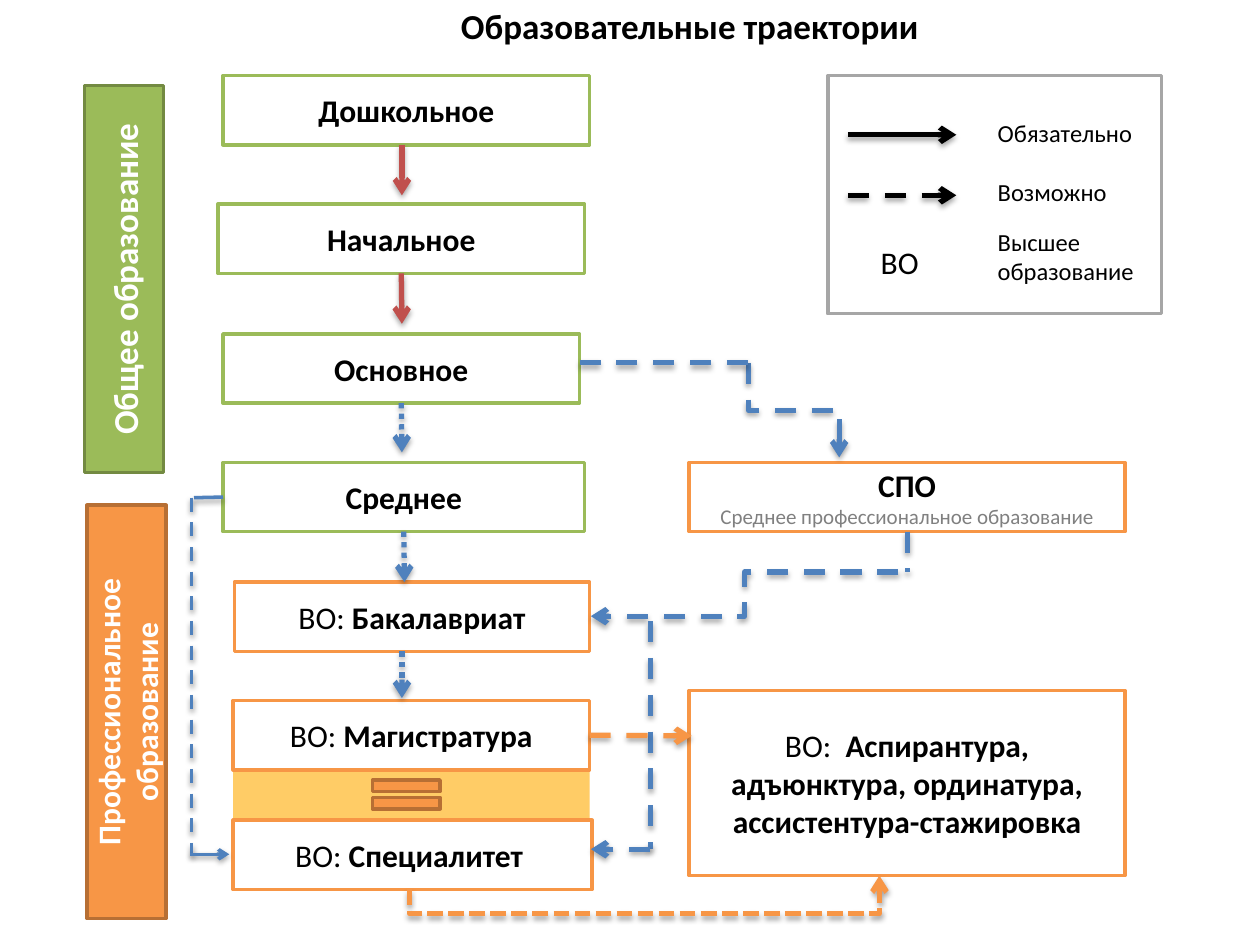
"""Builds the slide with the education pathways flowchart."""
from lxml.etree import SubElement
from pptx import Presentation
from pptx.dml.color import RGBColor
from pptx.enum.dml import MSO_LINE
from pptx.enum.shapes import MSO_CONNECTOR, MSO_SHAPE
from pptx.enum.text import MSO_ANCHOR, PP_ALIGN
from pptx.oxml.ns import qn
from pptx.util import Inches, Pt

BLACK = RGBColor(0x00, 0x00, 0x00)
WHITE = RGBColor(0xFF, 0xFF, 0xFF)
GREEN = RGBColor(0x9B, 0xBB, 0x59)
DARK_GREEN = RGBColor(0x73, 0x8A, 0x42)
ORANGE = RGBColor(0xF7, 0x96, 0x46)
DARK_ORANGE = RGBColor(0xB7, 0x6F, 0x34)
YELLOW = RGBColor(0xFF, 0xCC, 0x66)
BLUE = RGBColor(0x4F, 0x81, 0xBD)
RED = RGBColor(0xC0, 0x50, 0x4D)
GRAY = RGBColor(0x80, 0x80, 0x80)
LIGHT_GRAY = RGBColor(0xA6, 0xA6, 0xA6)
STEP_HEIGHT = 0.55


class Flowchart:
    def __init__(self, slide, font="Calibri"):
        self.shapes = slide.shapes
        self.font = font

    def box(self, left, top, width, height, fill=WHITE, line=None, kind=MSO_SHAPE.RECTANGLE):
        shape = self.shapes.add_shape(
            kind, Inches(left), Inches(top), Inches(width), Inches(height))
        shape.shadow.inherit = False
        shape.fill.solid()
        shape.fill.fore_color.rgb = fill
        if line is None:
            shape.line.fill.background()
        else:
            shape.line.color.rgb = line
            shape.line.width = Pt(2)
        return shape

    def style_runs(self, paragraph, size, color, bold, align):
        paragraph.alignment = align
        for run in paragraph.runs:
            run.font.name = self.font
            run.font.size = Pt(size)
            run.font.bold = bold
            run.font.color.rgb = color

    def caption(self, shape, text, size=18, color=BLACK, bold=True, align=PP_ALIGN.CENTER, lead=""):
        frame = shape.text_frame
        frame.word_wrap = True
        frame.vertical_anchor = MSO_ANCHOR.MIDDLE
        frame.text = lead or text
        paragraph = frame.paragraphs[0]
        if lead:
            paragraph.add_run().text = text
        self.style_runs(paragraph, size, color, bold, align)
        if lead:
            paragraph.runs[0].font.bold = False
        return shape

    def subtitle(self, shape, text):
        paragraph = shape.text_frame.add_paragraph()
        paragraph.text = text
        self.style_runs(paragraph, 12, GRAY, False, PP_ALIGN.CENTER)

    def step(self, left, top, width, text, line, lead="", height=STEP_HEIGHT):
        return self.caption(self.box(left, top, width, height, line=line), text, lead=lead)

    def band(self, left, top, height, text, size, fill, line):
        shape = self.caption(self.box(left, top, 0.63, height, fill, line), text, size, WHITE)
        shape.text_frame._txBody.bodyPr.set("vert", "vert270")

    def label(self, left, top, width, text, size=14, align=PP_ALIGN.LEFT):
        shape = self.shapes.add_textbox(
            Inches(left), Inches(top), Inches(width), Inches(0.35))
        self.caption(shape, text, size, bold=False, align=align)

    def style_line(self, connector, color, width, dash, arrow):
        connector.line.color.rgb = color
        connector.line.width = Pt(width)
        if dash is not None:
            connector.line.dash_style = dash
        properties = connector._element.spPr
        if arrow:
            SubElement(properties.find(qn("a:ln")), qn("a:tailEnd"), type="arrow")
        effects = SubElement(properties, qn("a:effectLst"))
        shadow = SubElement(effects, qn("a:outerShdw"), blurRad=str(Pt(3.1)),
                            dist=str(Pt(1.8)), dir="5400000", rotWithShape="0")
        tint = SubElement(shadow, qn("a:srgbClr"), val="000000")
        SubElement(tint, qn("a:alpha"), val="35000")

    def line(self, start, end, color, width=3, dash=None, arrow=True, source=None, site=2):
        connector = self.shapes.add_connector(
            MSO_CONNECTOR.STRAIGHT, *map(Inches, start + end))
        if source is not None:
            connector.begin_connect(source, site)
        self.style_line(connector, color, width, dash, arrow)

    def elbow(self, start, end, color, dash, vertical=False, bend=0.5):
        if vertical:
            x, y = (start[0] + end[0]) / 2, (start[1] + end[1]) / 2
            start, end = [(x + py - y, y - px + x) for px, py in (start, end)]
        connector = self.shapes.add_connector(
            MSO_CONNECTOR.ELBOW, *map(Inches, start + end))
        properties = connector._element.spPr
        if vertical:
            properties.find(qn("a:xfrm")).set("rot", "5400000")
        guides = properties.find(qn("a:prstGeom")).get_or_add_avLst()
        SubElement(guides, qn("a:gd"), name="adj1", fmla=f"val {round(bend * 100000)}")
        self.style_line(connector, color, 3, dash, True)


def main():
    presentation = Presentation()
    presentation.slide_width = Inches(10)
    presentation.slide_height = Inches(7.5)
    chart = Flowchart(presentation.slides.add_slide(presentation.slide_layouts[6]))

    chart.box(1.85, 5.56, 2.83, 1.5, YELLOW)
    preschool, primary, basic, secondary = [
        chart.step(left, top, width, text, GREEN) for left, top, width, text in (
            (1.77, 0.6, 2.91, "Дошкольное"),
            (1.73, 1.62, 2.91, "Начальное"),
            (1.77, 2.65, 2.83, "Основное"),
            (1.77, 3.67, 2.87, "Среднее"),
        )]
    chart.band(0.67, 0.68, 3.07, "Общее образование", 20, GREEN, DARK_GREEN)
    vocational = chart.step(5.47, 3.67, 3.46, "СПО", ORANGE)
    chart.subtitle(vocational, "Среднее профессиональное образование")
    bachelor, postgraduate, specialist, master = [
        chart.step(left, top, width, text, ORANGE, lead, height)
        for left, top, width, height, lead, text in (
            (1.86, 4.62, 2.82, STEP_HEIGHT, "ВО: ", "Бакалавриат"),
            (5.47, 5.48, 3.46, 1.47, "ВО:  ",
             "Аспирантура, адъюнктура, ординатура, ассистентура-стажировка"),
            (1.85, 6.51, 2.85, STEP_HEIGHT, "ВО: ", "Специалитет "),
            (1.85, 5.56, 2.83, STEP_HEIGHT, "ВО: ", "Магистратура"),
        )]
    chart.box(2.86, 6.11, 0.73, 0.39, ORANGE, DARK_ORANGE, MSO_SHAPE.MATH_EQUAL)

    dash, dots = MSO_LINE.DASH, MSO_LINE.ROUND_DOT
    for x, top, bottom, color, pattern, source in (
        (3.19, 1.15, 1.55, RED, None, None),
        (3.19, 2.18, 2.57, RED, None, primary),
        (3.19, 3.2, 3.59, BLUE, dots, basic),
        (3.21, 4.24, 4.62, BLUE, dots, secondary),
        (3.19, 5.17, 5.54, BLUE, dots, None),
    ):
        chart.line((x, top), (x, bottom), color, dash=pattern, source=source)

    chart.elbow((5.94, 2.88), (6.66, 3.63), BLUE, dash, vertical=True)
    chart.line((4.6, 2.88), (5.94, 2.88), BLUE, dash=dash, arrow=False)
    chart.elbow((7.13, 4.54), (4.69, 4.89), BLUE, dash)
    chart.line((7.2, 4.22), (7.2, 4.54), BLUE, dash=dash, arrow=False, source=vocational)
    chart.line((1.77, 3.95), (1.54, 3.95), BLUE, 2, arrow=False, source=secondary, site=1)
    chart.line((1.52, 3.95), (1.52, 6.79), BLUE, 2, dash, arrow=False)
    chart.line((1.51, 6.78), (1.82, 6.78), BLUE, 2)
    chart.line((5.16, 4.93), (5.16, 6.74), BLUE, dash=dash, arrow=False)
    chart.line((5.16, 6.74), (4.69, 6.74), BLUE, dash=dash)
    chart.line((4.69, 5.84), (5.49, 5.84), ORANGE, dash=dash, source=master, site=3)
    chart.elbow((3.25, 7.06), (6.98, 6.95), ORANGE, MSO_LINE.SQUARE_DOT, True, -1.75)
    chart.band(0.69, 4.01, 3.28, "Профессиональное образование", 18, ORANGE, DARK_ORANGE)

    chart.box(6.57, 0.6, 2.65, 1.89, line=LIGHT_GRAY)
    for y, pattern in ((1.55, dash), (1.07, None)):
        chart.line((6.73, y), (7.59, y), BLACK, dash=pattern)
    mandatory = chart.box(7.82, 0.88, 1.35, 0.35, line=WHITE)
    chart.caption(mandatory, "Обязательно", 14, bold=False, align=PP_ALIGN.LEFT)
    chart.label(7.82, 1.35, 1.28, "Возможно")
    title = chart.box(1.77, 0.05, 7.41, 0.31, line=WHITE)
    chart.caption(title, "Образовательные траектории", 20)
    chart.label(6.5, 1.9, 1.28, "ВО", 18, PP_ALIGN.CENTER)
    chart.label(7.82, 1.86, 1.43, "Высшее образование")

    presentation.save("out.pptx")


if __name__ == "__main__":
    main()
